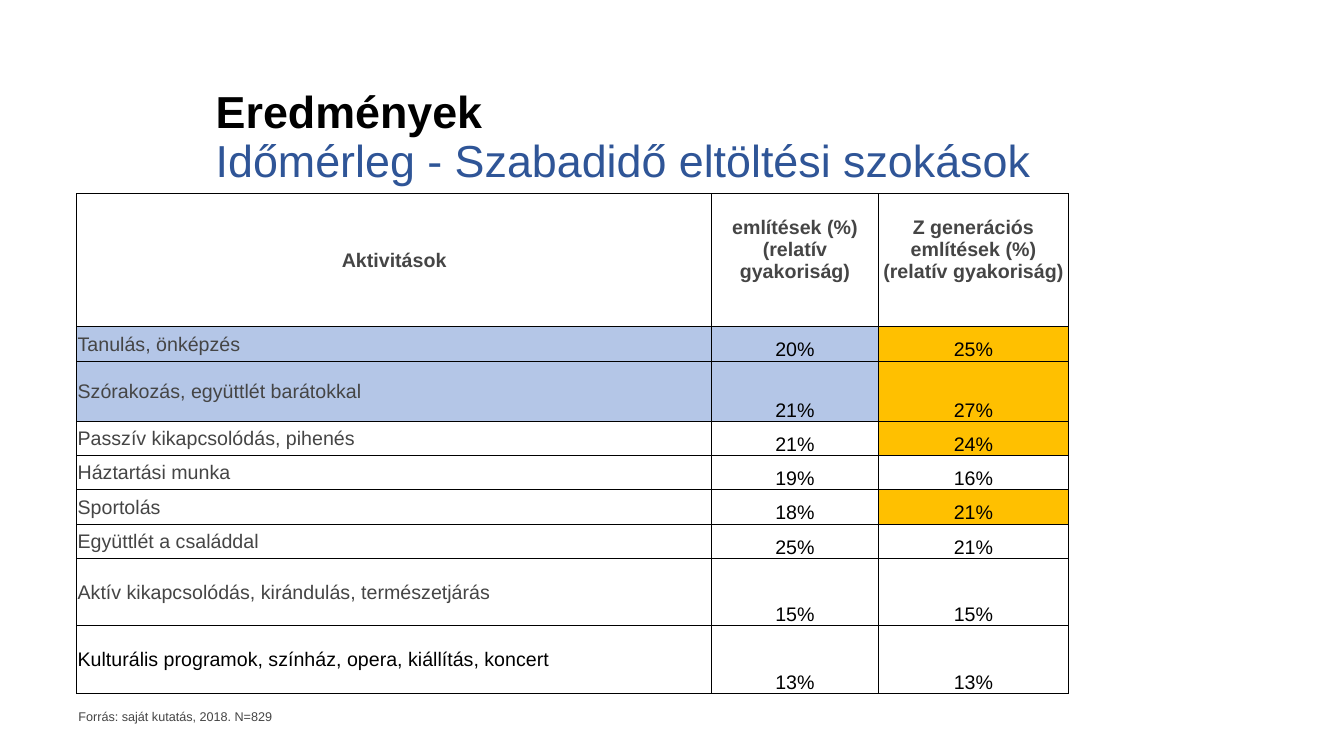
import pptx
import pptx.dml.color
import pptx.enum.text
import pptx.oxml
import pptx.oxml.ns
import pptx.util
from pptx.util import Inches

RGBColor = pptx.dml.color.RGBColor
Align = pptx.enum.text.PP_ALIGN
Anchor = pptx.enum.text.MSO_ANCHOR

BLACK = RGBColor(0x00, 0x00, 0x00)
GREY = RGBColor(0x45, 0x45, 0x45)
NAVY = RGBColor(0x2F, 0x55, 0x97)
BLUE = RGBColor(0xB4, 0xC6, 0xE7)
GOLD = RGBColor(0xFF, 0xC0, 0x00)
WHITE = RGBColor(0xFF, 0xFF, 0xFF)

WIDTHS = [6.3, 1.65, 1.89]
HEADS = [
    ("Aktivitások", 0),
    ("említések (%) (relatív gyakoriság)", 0.22),
    ("Z generációs említések (%) (relatív gyakoriság)", 0.22),
]
HEAD_TALL = 1.32
ROWS = [
    ("Tanulás, önképzés", "20%", "25%", 0.34, GREY, (BLUE, BLUE, GOLD)),
    ("Szórakozás, együttlét barátokkal", "21%", "27%", 0.6, GREY, (BLUE, BLUE, GOLD)),
    ("Passzív kikapcsolódás, pihenés", "21%", "24%", 0.34, GREY, (None, None, GOLD)),
    ("Háztartási munka", "19%", "16%", 0.34, GREY, (None, None, None)),
    ("Sportolás", "18%", "21%", 0.34, GREY, (None, None, GOLD)),
    ("Együttlét a családdal", "25%", "21%", 0.34, GREY, (None, None, None)),
    ("Aktív kikapcsolódás, kirándulás, természetjárás", "15%", "15%", 0.67, GREY,
     (None, None, None)),
    ("Kulturális programok, színház, opera, kiállítás, koncert", "13%", "13%", 0.67, BLACK,
     (None, WHITE, WHITE)),
]


def add_run(para, text, size, color, bold=False):
    run = para.add_run()
    run.text = text
    run.font.name = "Arial"
    run.font.size = pptx.util.Pt(size)
    run.font.bold = bold
    run.font.color.rgb = color


def add_box(slide, left, top, width, height):
    box = slide.shapes.add_textbox(Inches(left), Inches(top), Inches(width), Inches(height))
    return box.text_frame


def add_title(slide):
    frame = add_box(slide, 2.07, 0.83, 10.64, 1.09)
    frame.word_wrap = True
    frame.vertical_anchor = Anchor.MIDDLE
    frame.margin_left = frame.margin_right = Inches(0.07)
    frame.margin_top = frame.margin_bottom = Inches(0.04)
    head, sub = frame.paragraphs[0], frame.add_paragraph()
    head.line_spacing = sub.line_spacing = 0.9
    add_run(head, "Eredmények", 32, BLACK, True)
    add_run(sub, "Időmérleg - Szabadidő eltöltési szokások", 32, NAVY)


def add_source(slide):
    frame = add_box(slide, 0.68, 6.98, 2.14, 0.25)
    frame.word_wrap = False
    frame.auto_size = pptx.enum.text.MSO_AUTO_SIZE.SHAPE_TO_FIT_TEXT
    add_run(frame.paragraphs[0], "Forrás: saját kutatás, 2018. N=829", 9, GREY)


def add_edges(cell):
    props = cell._tc.get_or_add_tcPr()
    for spot, side in enumerate("LRTB"):
        edge = pptx.oxml.parse_xml(
            f'<a:ln{side} {pptx.oxml.ns.nsdecls("a")} w="6350"><a:solidFill>'
            f'<a:srgbClr val="{BLACK}"/></a:solidFill></a:ln{side}>')
        props.insert(spot, edge)


def set_cell(cell, text, color, fill=None, align=Align.CENTER, anchor=Anchor.MIDDLE,
             bold=False, bottom=0):
    cell.margin_left = cell.margin_right = cell.margin_top = Inches(0.01)
    cell.margin_bottom = Inches(bottom)
    cell.vertical_anchor = anchor
    if fill is None:
        cell.fill.background()
    else:
        cell.fill.solid()
        cell.fill.fore_color.rgb = fill
    add_edges(cell)
    para = cell.text_frame.paragraphs[0]
    para.alignment = align
    add_run(para, text, 14, color, bold)


def add_grid(slide):
    talls = [HEAD_TALL] + [row[3] for row in ROWS]
    grid = slide.shapes.add_table(
        len(talls), len(WIDTHS), Inches(0.76), Inches(1.92),
        Inches(sum(WIDTHS)), Inches(sum(talls))).table
    for col, width in zip(grid.columns, WIDTHS):
        col.width = Inches(width)
    for row, tall in zip(grid.rows, talls):
        row.height = Inches(tall)
    for c, (text, bottom) in enumerate(HEADS):
        set_cell(grid.cell(0, c), text, GREY, bold=True, bottom=bottom)
    for r, (name, share, young, _, ink, fills) in enumerate(ROWS, 1):
        set_cell(grid.cell(r, 0), name, ink, fills[0], Align.JUSTIFY)
        for c, text in enumerate((share, young), 1):
            set_cell(grid.cell(r, c), text, BLACK, fills[c], anchor=Anchor.BOTTOM)


def main():
    deck = pptx.Presentation()
    deck.slide_width = Inches(13.33)
    deck.slide_height = Inches(7.5)
    slide = deck.slides.add_slide(deck.slide_layouts[6])
    add_source(slide)
    add_title(slide)
    add_grid(slide)
    deck.save("out.pptx")


if __name__ == "__main__":
    main()
